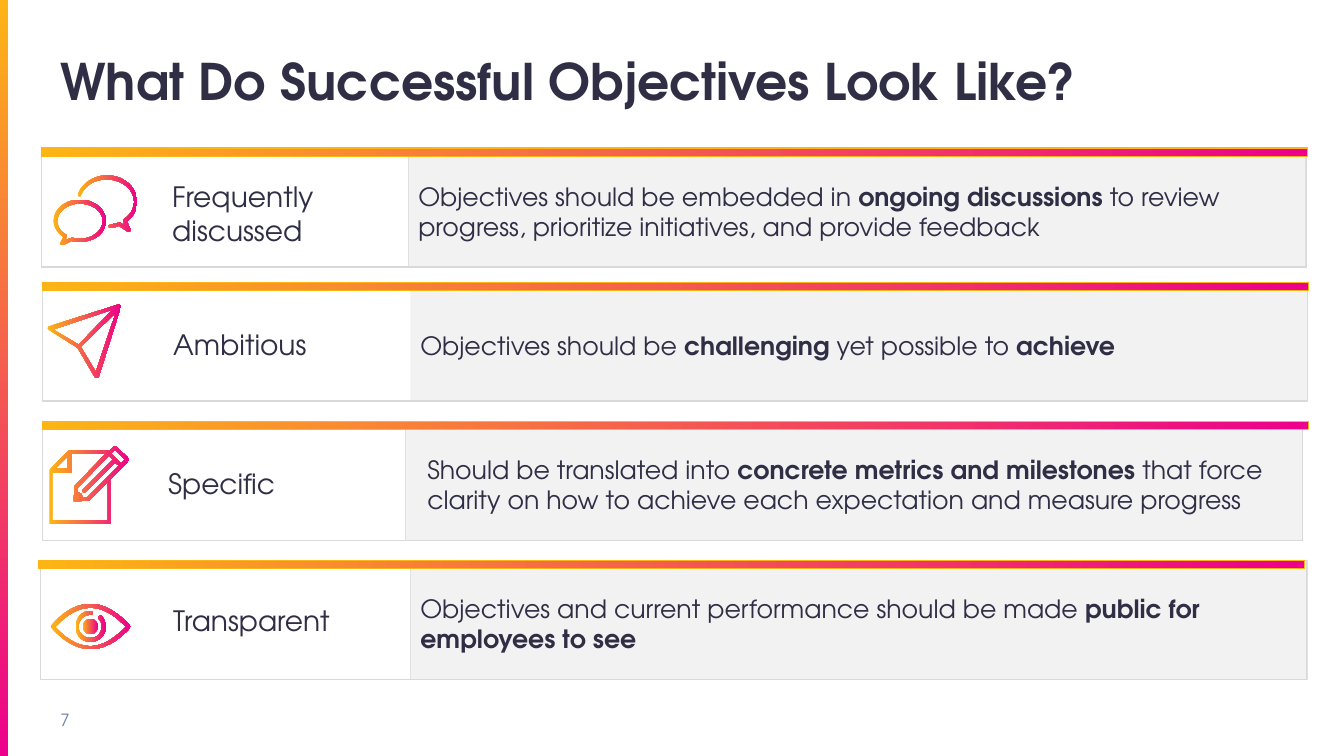
from copy import deepcopy
from dataclasses import dataclass

from pptx import Presentation
from pptx.dml.color import RGBColor
from pptx.enum import shapes, text
from pptx.oxml import ns
from pptx.util import Inches, Pt

Box = tuple[float, float, float, float]
Contour = list[tuple[float, ...]]  # (x, y) is a corner, six numbers are a cubic curve


@dataclass(frozen=True)
class Theme:
    font: str = "TeX Gyre Adventor"
    ink: str = "302E45"
    number: str = "6C80A5"
    panel: str = "F2F2F2"
    panel_line: str = "DFE1DF"
    frame_line: str = "D9D9D9"
    gradient: tuple[str, str] = ("FDB515", "EC008C")
    title_size: int = 36
    label_size: int = 20
    body_size: int = 18
    number_size: int = 12


@dataclass(frozen=True)
class Row:
    label: str
    runs: list[tuple[str, bool]]
    top: float
    frame_left: float
    frame_width: float
    bar_left: float
    panel_left: float
    body_left: float
    body_width: float
    label_box: Box
    icon: list[list[Contour]]
    panel_lined: bool = True


THEME = Theme()
ROW_HEIGHT, PANEL_WIDTH = 1.18, 8.9
BAR_WIDTH, BAR_HEIGHT = 12.56, 0.08
CURVE_STEPS = 10

FRONT_BUBBLE: list[Contour] = [
    [(0.79, 1.98), (0.65, 1.98, 0.53, 2.08, 0.53, 2.19), (0.53, 2.25, 0.57, 2.31, 0.63, 2.35),
     (0.6, 2.41), (0.6, 2.42, 0.6, 2.44, 0.63, 2.43), (0.71, 2.39),
     (0.74, 2.4, 0.76, 2.4, 0.79, 2.4), (0.94, 2.4, 1.05, 2.31, 1.05, 2.19),
     (1.05, 2.08, 0.94, 1.98, 0.79, 1.98)],
    [(0.79, 2.37), (0.76, 2.37, 0.74, 2.36, 0.71, 2.36), (0.65, 2.38), (0.66, 2.35),
     (0.66, 2.33), (0.6, 2.3, 0.57, 2.25, 0.57, 2.19), (0.57, 2.1, 0.67, 2.02, 0.79, 2.02),
     (0.92, 2.02, 1.02, 2.1, 1.02, 2.19), (1.02, 2.29, 0.92, 2.37, 0.79, 2.37)],
]
BACK_BUBBLE: list[Contour] = [
    [(1.26, 2.2), (1.32, 2.15, 1.36, 2.08, 1.36, 2), (1.36, 1.86, 1.23, 1.74, 1.06, 1.74),
     (0.93, 1.74, 0.81, 1.82, 0.77, 1.93), (0.77, 1.95, 0.8, 1.96, 0.8, 1.94),
     (0.84, 1.84, 0.94, 1.78, 1.06, 1.78), (1.21, 1.78, 1.33, 1.88, 1.33, 2),
     (1.33, 2.07, 1.29, 2.14, 1.22, 2.18), (1.22, 2.2), (1.24, 2.24), (1.19, 2.21),
     (1.17, 2.21), (1.15, 2.22, 1.12, 2.22, 1.1, 2.23), (1.07, 2.23, 1.07, 2.26, 1.1, 2.26),
     (1.13, 2.26, 1.15, 2.25, 1.18, 2.24), (1.27, 2.3), (1.28, 2.3, 1.3, 2.3, 1.29, 2.27)],
]
PLANE: list[Contour] = [
    [(1.2, 3.03), (1.18, 3.02), (0.48, 3.24), (0.47, 3.26), (0.48, 3.27), (0.77, 3.45),
     (0.94, 3.74), (0.96, 3.75), (0.98, 3.74), (1.2, 3.04)],
    [(1.12, 3.07), (0.78, 3.42), (0.53, 3.27)],
    [(0.95, 3.69), (0.8, 3.44), (1.15, 3.1)],
]
NOTE_AND_PENCIL: list[Contour] = [
    [(1.28, 4.55), (1.15, 4.43), (1.14, 4.42), (1.13, 4.43), (1.09, 4.47), (0.68, 4.47),
     (0.49, 4.66), (0.49, 5.2), (1.1, 5.2), (1.1, 4.75), (1.28, 4.57)],
    [(1.05, 4.5), (0.74, 4.82), (0.73, 4.97), (0.75, 4.98), (0.81, 4.97), (0.88, 4.97),
     (1.07, 4.78), (1.07, 5.16), (0.52, 5.16), (0.52, 4.69), (0.71, 4.69), (0.71, 4.5)],
    [(0.67, 4.65), (0.55, 4.65), (0.67, 4.53)],
    [(1.24, 4.56), (1.2, 4.6), (1.1, 4.5), (1.14, 4.46)],
    [(0.77, 4.91), (0.79, 4.94), (0.76, 4.94)],
    [(0.82, 4.88), (0.83, 4.89), (0.85, 4.88), (1.14, 4.59), (1.18, 4.62), (0.87, 4.93),
     (0.82, 4.94), (0.81, 4.9), (0.77, 4.88), (0.77, 4.84), (1.08, 4.52), (1.12, 4.56),
     (0.82, 4.86)],
]
EYE_OUTLINE: list[Contour] = [
    [(0.9, 5.99), (0.76, 5.99, 0.64, 6.06, 0.51, 6.2), (0.5, 6.21, 0.5, 6.22, 0.51, 6.23),
     (0.64, 6.37, 0.77, 6.44, 0.9, 6.44), (1.03, 6.44, 1.16, 6.37, 1.29, 6.23),
     (1.3, 6.22, 1.3, 6.21, 1.29, 6.2), (1.16, 6.07, 1.03, 5.99, 0.9, 5.99)],
    [(0.9, 6.03), (1.01, 6.03, 1.13, 6.09, 1.25, 6.22), (1.13, 6.34, 1.01, 6.41, 0.9, 6.41),
     (0.78, 6.41, 0.67, 6.35, 0.55, 6.22), (0.67, 6.09, 0.78, 6.03, 0.9, 6.03)],
]
IRIS: list[Contour] = [
    [(0.9, 6.06), (0.81, 6.06, 0.75, 6.13, 0.75, 6.22), (0.75, 6.3, 0.81, 6.37, 0.9, 6.37),
     (0.98, 6.37, 1.05, 6.3, 1.05, 6.22), (1.05, 6.18, 1.03, 6.14, 1.01, 6.11),
     (1, 6.09, 0.97, 6.11, 0.98, 6.14), (1, 6.16, 1.01, 6.18, 1.01, 6.22),
     (1.01, 6.28, 0.96, 6.33, 0.9, 6.33), (0.83, 6.33, 0.78, 6.28, 0.78, 6.22),
     (0.78, 6.15, 0.83, 6.1, 0.9, 6.1), (0.93, 6.1, 0.93, 6.06, 0.9, 6.06)],
]
PUPIL: Box = (0.82, 6.14, 0.15, 0.15)

ROWS = [
    Row("Frequently discussed",
        [("Objectives should be embedded in ", False), ("ongoing discussions ", True),
         ("to review progress, prioritize initiatives, and provide feedback", False)],
        1.47, 0.41, 12.55, 0.41, 4.05, 4.05, 8.79, (1.61, 1.82, 2.18, 0.59),
        [FRONT_BUBBLE, BACK_BUBBLE]),
    Row("Ambitious",
        [("Objectives should be ", False), ("challenging", True),
         (" yet possible to ", False), ("achieve", True)],
        2.8, 0.42, 12.55, 0.42, 4.07, 4.07, 8.79, (1.62, 3.12, 2.43, 0.59),
        [PLANE], panel_lined=False),
    Row("Specific",
        [("Should be translated into ", False), ("concrete metrics and milestones ", True),
         ("that force clarity on how to achieve each expectation and measure progress", False)],
        4.18, 0.42, 12.5, 0.42, 4.02, 4.14, 8.67, (1.57, 4.5, 2.46, 0.59),
        [NOTE_AND_PENCIL]),
    Row("Transparent",
        [("Objectives and current performance should be made ", False),
         ("public for employees to see", True)],
        5.56, 0.4, 12.56, 0.38, 4.07, 4.07, 8.79, (1.62, 5.86, 2.43, 0.59),
        [EYE_OUTLINE, IRIS]),
]


def paint_gradient(sp, angle: float = 0) -> None:
    sp.fill.gradient()
    sp.fill.gradient_angle = angle
    for stop, color in zip(sp.fill.gradient_stops, THEME.gradient):
        stop.color.rgb = RGBColor.from_string(color)


def outline_with_fill(sp) -> None:
    """Give the outline the same gradient as the fill."""
    sp.line.width = Pt(1)
    gradient, ln = (sp.element.spPr.find(ns.qn(tag)) for tag in ("a:gradFill", "a:ln"))
    ln.replace(ln.find(ns.qn("a:noFill")), deepcopy(gradient))


def add_preset(slide, box: Box, fill: str | None = None, line: str | None = None,
               kind=shapes.MSO_SHAPE.RECTANGLE):
    sp = slide.shapes.add_shape(kind, *map(Inches, box))
    sp.shadow.inherit = False
    for part, color in ((sp.fill, fill), (sp.line.fill, line)):
        if color:
            part.solid()
            part.fore_color.rgb = RGBColor.from_string(color)
        else:
            part.background()
    if line:
        sp.line.width = Pt(1)
    return sp


def flatten(contour: Contour) -> list[tuple[int, int]]:
    """Turn corners and cubic curves into points in EMU."""
    points = [contour[0]]
    for step in contour[1:]:
        if len(step) == 2:
            points.append(step)
            continue
        (x0, y0), (x1, y1, x2, y2, x3, y3) = points[-1], step
        for i in range(1, CURVE_STEPS + 1):
            t = i / CURVE_STEPS
            a, b, c, d = (1 - t) ** 3, 3 * t * (1 - t) ** 2, 3 * t * t * (1 - t), t ** 3
            points.append((a * x0 + b * x1 + c * x2 + d * x3, a * y0 + b * y1 + c * y2 + d * y3))
    return [(Inches(x), Inches(y)) for x, y in points]


def add_outline(slide, contours: list[Contour]) -> None:
    first, *holes = map(flatten, contours)
    builder = slide.shapes.build_freeform(*first[0])
    builder.add_line_segments(first[1:], close=True)
    for hole in holes:
        builder.move_to(*hole[0])
        builder.add_line_segments(hole[1:], close=True)
    sp = builder.convert_to_shape()
    sp.shadow.inherit = False
    sp.line.fill.background()
    paint_gradient(sp)


def style(p, size: int, color: str = THEME.ink) -> None:
    p.font.name, p.font.size = THEME.font, Pt(size)
    p.font.color.rgb = RGBColor.from_string(color)


def add_text(slide, box: Box, runs: list[tuple[str, bool]], size: int,
             color: str = THEME.ink, space_before: int = 10):
    tf = slide.shapes.add_textbox(*map(Inches, box)).text_frame
    tf.word_wrap = True
    tf.vertical_anchor = text.MSO_ANCHOR.MIDDLE
    p = tf.paragraphs[0]
    p.space_before = Pt(space_before)
    style(p, size, color)
    for words, bold in runs:
        r = p.add_run()
        r.text, r.font.bold = words, bold
    return tf


def add_row(slide, row: Row) -> None:
    add_preset(slide, (row.panel_left, row.top, PANEL_WIDTH, ROW_HEIGHT), THEME.panel,
               THEME.panel_line if row.panel_lined else None)
    add_text(slide, (row.body_left, row.top + 0.36, row.body_width, 0.53), row.runs, THEME.body_size)
    add_preset(slide, (row.frame_left, row.top, row.frame_width, ROW_HEIGHT), line=THEME.frame_line)
    add_text(slide, row.label_box, [(row.label, False)], THEME.label_size)
    bar = add_preset(slide, (row.bar_left, row.top, BAR_WIDTH, BAR_HEIGHT))
    paint_gradient(bar)
    outline_with_fill(bar)
    for outline in row.icon:
        add_outline(slide, outline)


def add_title(slide, words: str) -> None:
    title = slide.shapes.title
    title.left, title.top, title.width, title.height = map(Inches, (0.6, 0.49, 12.13, 0.61))
    tf = title.text_frame
    tf.text = words
    tf.vertical_anchor = text.MSO_ANCHOR.BOTTOM
    tf.margin_left = tf.margin_right = tf.margin_top = tf.margin_bottom = 0
    p = tf.paragraphs[0]
    p.alignment = text.PP_ALIGN.LEFT
    style(p, THEME.title_size)
    p.font.bold = True


def main() -> None:
    prs = Presentation()
    prs.slide_width, prs.slide_height = Inches(13.33), Inches(7.5)
    slide = prs.slides.add_slide(prs.slide_layouts[5])
    add_title(slide, "What Do Successful Objectives Look Like?")
    paint_gradient(add_preset(slide, (0, 0, 0.08, 7.5)), angle=270)
    number = add_text(slide, (0.6, 6.94, 0.69, 0.4), [("7", False)], THEME.number_size,
                      THEME.number, space_before=0)
    number.margin_left = 0
    for row in ROWS:
        add_row(slide, row)
    paint_gradient(add_preset(slide, PUPIL, kind=shapes.MSO_SHAPE.OVAL))
    prs.save("out.pptx")


if __name__ == "__main__":
    main()
